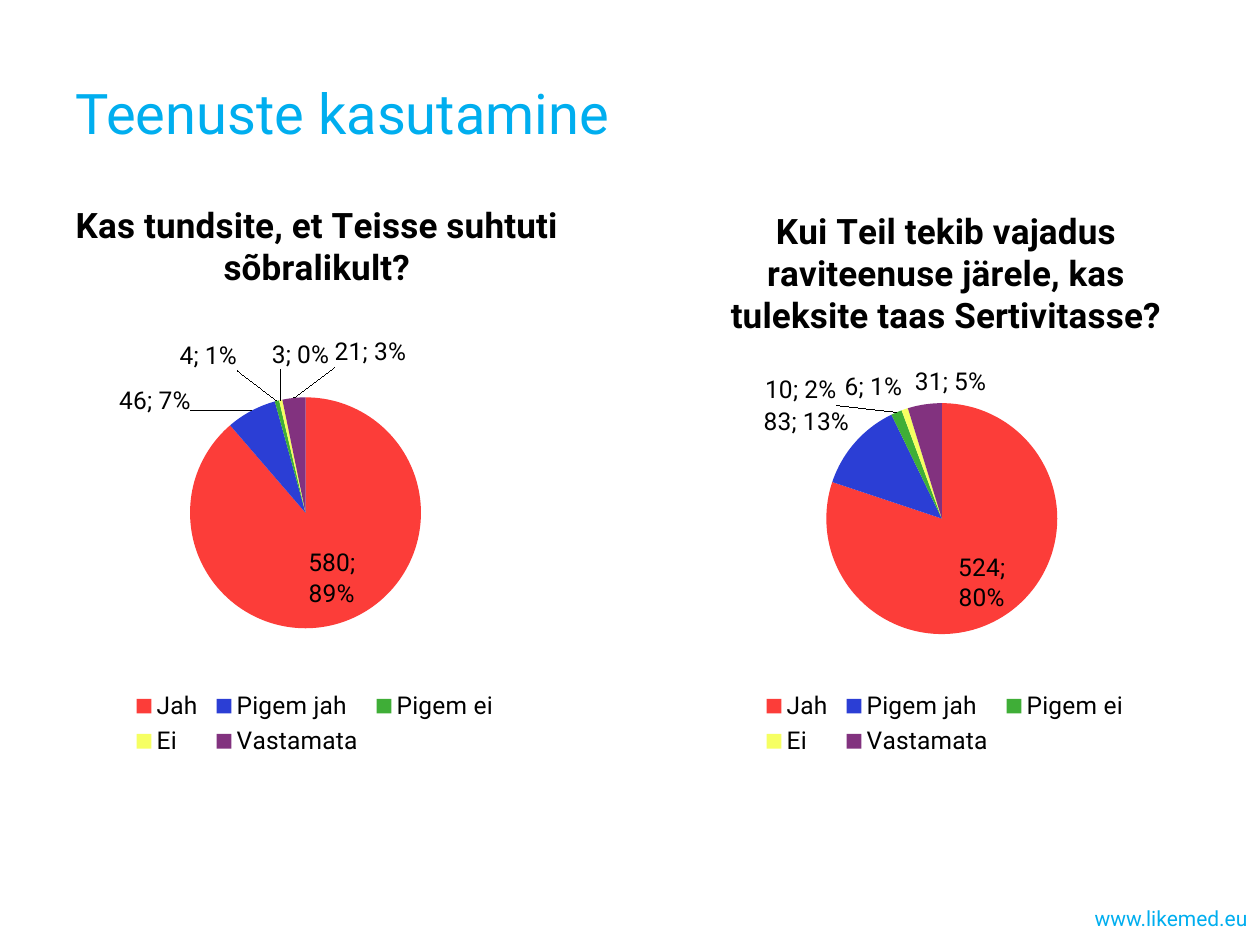
from lxml import etree
from pptx import Presentation
from pptx.chart.data import CategoryChartData
from pptx.dml.color import RGBColor
from pptx.enum.chart import XL_CHART_TYPE as ChartType
from pptx.enum.chart import XL_LABEL_POSITION as LabelPos
from pptx.enum.chart import XL_LEGEND_POSITION as LegendPos
from pptx.enum.text import MSO_ANCHOR as Anchor
from pptx.enum.text import PP_ALIGN as Align
from pptx.oxml import parse_xml
from pptx.oxml.ns import nsdecls, qn
from pptx.util import Pt

FONT = "Roboto"
CYAN = RGBColor(0x00, 0xAE, 0xEF)
BLACK = RGBColor(0x00, 0x00, 0x00)
SLICES = [
    RGBColor(0xFC, 0x3D, 0x39),
    RGBColor(0x2B, 0x3E, 0xD5),
    RGBColor(0x3F, 0xAE, 0x37),
    RGBColor(0xF6, 0xFF, 0x62),
    RGBColor(0x82, 0x32, 0x7F),
]
ANSWERS = ["Jah", "Pigem jah", "Pigem ei", "Ei", "Vastamata"]
FRIENDLY = "Kas tundsite, et Teisse suhtuti sõbralikult?"
RETURN = "Kui Teil tekib vajadus raviteenuse järele, kas tuleksite taas Sertivitasse?"


def add_run(p, text, size, color, bold=False):
    """Append a formatted run to a paragraph."""
    r = p.add_run()
    r.text = text
    r.font.name, r.font.size, r.font.bold = FONT, Pt(size), bold
    r.font.color.rgb = color


def add_text(sp, box, text, size, align):
    """Place a shape and fill it with one line of cyan text."""
    sp.left, sp.top, sp.width, sp.height = map(Pt, box)
    tf = sp.text_frame
    tf.word_wrap = True
    tf.vertical_anchor = Anchor.MIDDLE
    p = tf.paragraphs[0]
    p.alignment = align
    add_run(p, text, size, CYAN)


def make_layout(**values):
    """Return a manual chart layout element."""
    inner = "".join(f'<c:{k} val="{v}"/>' for k, v in values.items())
    return parse_xml(
        f'<c:layout {nsdecls("c")}><c:manualLayout>{inner}</c:manualLayout></c:layout>'
    )


def set_layout(parent, after, **values):
    """Replace the layout of a chart part, keeping the schema order."""
    for old in parent.findall(qn("c:layout")):
        parent.remove(old)
    layout = make_layout(**values)
    if after is None:
        parent.insert(0, layout)
    else:
        parent.find(qn(after)).addnext(layout)


def add_separator(labels):
    """Put a semicolon between value and percentage."""
    sep = etree.Element(qn("c:separator"))
    sep.text = "; "
    labels.find(qn("c:showBubbleSize")).addnext(sep)


def style_labels(plot, offsets):
    """Show value and percentage, each label moved by its offset."""
    plot.has_data_labels = True
    labels = plot.data_labels
    labels.show_value = labels.show_percentage = True
    for i, (dx, dy) in enumerate(offsets):
        label = plot.series[0].points[i].data_label
        label.position = LabelPos.OUTSIDE_END if i else LabelPos.CENTER
        dlbl = plot.series[0].data_labels._element.findall(qn("c:dLbl"))[i]
        dlbl.find(qn("c:showVal")).set("val", "1")
        dlbl.find(qn("c:showPercent")).set("val", "1")
        add_separator(dlbl)
        if dx or dy:
            set_layout(dlbl, "c:idx", x=dx, y=dy)
    series_labels = plot.series[0].data_labels
    series_labels.show_value = series_labels.show_percentage = True
    series_labels.show_legend_key = False


def add_pie(s, left, title, values, title_at, pie_at, offsets):
    """Add a titled pie chart with a legend below."""
    data = CategoryChartData()
    data.categories = ANSWERS
    data.add_series(title, values)
    frame = s.shapes.add_chart(ChartType.PIE, Pt(left), Pt(105), Pt(360), Pt(330), data)
    chart = frame.chart
    chart.font.name, chart.font.size = FONT, Pt(14)
    chart.font.color.rgb = BLACK

    chart.has_title = True
    add_run(chart.chart_title.text_frame.paragraphs[0], title, 20, BLACK, bold=True)
    x, y = title_at
    set_layout(chart.chart_title._element, "c:tx", xMode="edge", yMode="edge", x=x, y=y)

    chart.has_legend = True
    chart.legend.position = LegendPos.BOTTOM
    chart.legend.include_in_layout = False
    set_layout(chart.legend._element, "c:legendPos", xMode="edge", yMode="edge",
               x=0.2, y=0.87, w=0.6, h=0.13)

    plot = chart.plots[0]
    plot.vary_by_categories = True
    for i, color in enumerate(SLICES):
        fill = plot.series[0].points[i].format.fill
        fill.solid()
        fill.fore_color.rgb = color
    x, y = pie_at
    set_layout(chart._chartSpace.chart.plotArea, None, layoutTarget="inner",
               xMode="edge", yMode="edge", x=x, y=y, w=0.37, h=0.4)
    style_labels(plot, offsets)


def main():
    """Build the slide and save it."""
    prs = Presentation()
    prs.slide_width, prs.slide_height = Pt(720), Pt(540)
    s = prs.slides.add_slide(prs.slide_layouts[5])
    add_text(s.shapes.title, (36, 6, 648, 116), "Teenuste kasutamine", 32, Align.LEFT)
    url_box = s.shapes.add_textbox(0, 0, 0, 0)
    add_text(url_box, (492, 510, 228, 29), "www.likemed.eu", 12, Align.RIGHT)
    add_pie(s, 0, FRIENDLY, [580, 46, 4, 3, 21], (0.11, 0.02), (0.3, 0.37),
            [(0.01, 0.02), (-0.09, 0.02), (-0.06, -0.04), (0.08, -0.04), (0.18, -0.04)])
    add_pie(s, 360, RETURN, [524, 83, 10, 6, 31], (0.15, 0.03), (0.31, 0.38),
            [(0.01, 0.03), (0, 0), (-0.09, 0), (0, 0), (0.1, 0)])
    prs.save("out.pptx")


if __name__ == "__main__":
    main()
